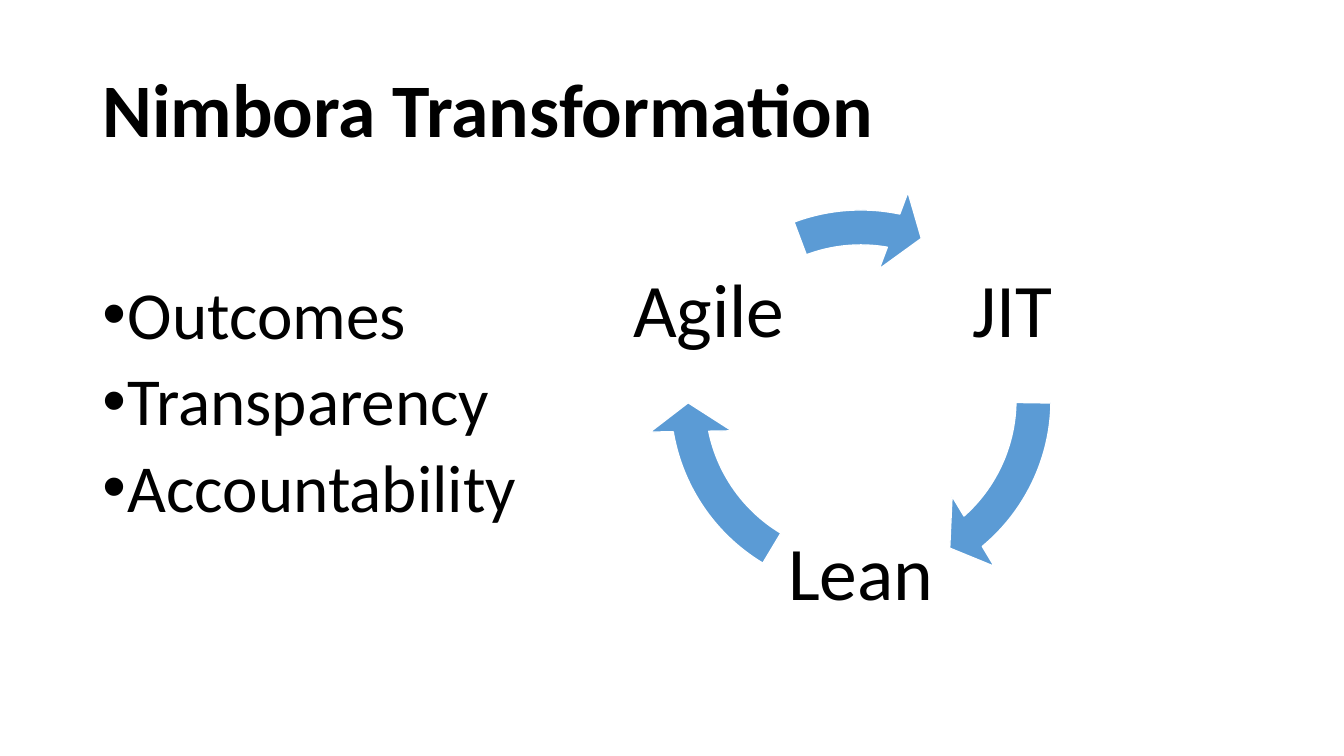
"""Build the Nimbora Transformation slide: a short list beside a three-step cycle."""
import math
from dataclasses import dataclass

from pptx import Presentation
from pptx import util as u
from pptx.dml.color import RGBColor
from pptx.enum import shapes, text


@dataclass(frozen=True)
class Theme:
    """Colours, font and type sizes of the slide."""
    font: str = "Calibri"
    ink: RGBColor = RGBColor(0, 0, 0)
    arrow: RGBColor = RGBColor(0x5B, 0x9B, 0xD5)
    edge: RGBColor = RGBColor(255, 255, 255)
    heading: int = 54
    body: int = 48


@dataclass(frozen=True)
class Frame:
    """A rectangle in grid columns and rows."""
    left: float
    top: float
    width: float
    height: float


@dataclass(frozen=True)
class Step:
    """A cycle label, its angle, and the angles its arrow runs between."""
    label: str
    angle: float
    start: float
    end: float


THEME = Theme()
COLUMNS, ROWS = 160, 90
CELL = u.Inches(7.5) / ROWS
CENTER_COLUMN, CENTER_ROW = 102.48, 47.64
RADIUS, RING_SIZE, LABEL_SIZE = 20.88, 50.88, 21.48
TITLE = Frame(11, 4.8, 138, 17.4)
BODY = Frame(11, 32.88, 67.68, 48.36)
OUTCOMES = ("Outcomes", "Transparency", "Accountability")
STEPS = (
    Step("JIT", -30, 0.86, 49.4),
    Step("Lean", 90, 121, 169.54),
    Step("Agile", 210, 249.45, 280.94),
)


def grid(cells: float) -> u.Emu:
    """Turn grid cells into a length."""
    return u.Emu(round(cells * CELL))


def bounds(frame: Frame) -> tuple:
    """Return left, top, width and height of a frame as lengths."""
    return tuple(map(grid, (frame.left, frame.top, frame.width, frame.height)))


def square(column: float, row: float, size: float) -> Frame:
    """Return a square frame centred on a grid point."""
    return Frame(column - size / 2, row - size / 2, size, size)


def place(box, frame: Frame) -> None:
    """Move a placeholder onto a frame."""
    box.left, box.top, box.width, box.height = bounds(frame)


def write(box, *lines: str, size: int, align=text.PP_ALIGN.LEFT,
          anchor=text.MSO_ANCHOR.MIDDLE, bold: bool = False,
          before: float = 0, hanging: float = 0) -> None:
    """Fill a box with one formatted paragraph per line."""
    frame = box.text_frame
    frame.word_wrap = True
    frame.auto_size = text.MSO_AUTO_SIZE.NONE
    frame.vertical_anchor = anchor
    for index, line in enumerate(lines):
        para = frame.add_paragraph() if index else frame.paragraphs[0]
        para.alignment = align
        para.line_spacing = 0.9
        para.space_before = u.Pt(before)
        if hanging:
            properties = para._p.get_or_add_pPr()
            properties.set("marL", str(grid(hanging)))
            properties.set("indent", str(-grid(hanging)))
        span = para.add_run()
        span.text = line
        span.font.name = THEME.font
        span.font.size = u.Pt(size)
        span.font.bold = bold
        span.font.color.rgb = THEME.ink


def add_label(page, step: Step) -> None:
    """Write a step's label at its angle on the cycle."""
    angle = math.radians(step.angle)
    frame = square(CENTER_COLUMN + RADIUS * math.cos(angle),
                   CENTER_ROW + RADIUS * math.sin(angle), LABEL_SIZE)
    box = page.shapes.add_textbox(*bounds(frame))
    inner = box.text_frame
    inner.margin_left = inner.margin_right = u.Inches(0.07)
    inner.margin_top = inner.margin_bottom = u.Inches(0.07)
    write(box, step.label, size=THEME.heading, align=text.PP_ALIGN.CENTER)


def add_arrow(page, step: Step) -> None:
    """Draw the curved arrow that leaves a step."""
    ring = square(CENTER_COLUMN, CENTER_ROW, RING_SIZE)
    arrow = page.shapes.add_shape(shapes.MSO_SHAPE.CIRCULAR_ARROW, *bounds(ring))
    percentages = (8.2, 9.6 * 60, step.end * 60, step.start * 60, 9.6)
    for index, percentage in enumerate(percentages):
        arrow.adjustments[index] = percentage / 100
    arrow.shadow.inherit = False
    arrow.fill.solid()
    arrow.fill.fore_color.rgb = THEME.arrow
    arrow.line.color.rgb = THEME.edge
    arrow.line.width = u.Pt(1)


def main() -> None:
    """Build and save the deck."""
    deck = Presentation()
    deck.slide_width, deck.slide_height = grid(COLUMNS), grid(ROWS)
    page = deck.slides.add_slide(deck.slide_layouts[1])
    title, body = page.placeholders
    place(title, TITLE)
    write(title, "Nimbora Transformation", size=THEME.heading, bold=True)
    place(body, BODY)
    write(body, *OUTCOMES, size=THEME.body, anchor=text.MSO_ANCHOR.TOP,
          before=10, hanging=3)
    for step in STEPS:
        add_label(page, step)
        add_arrow(page, step)
    deck.save("out.pptx")


if __name__ == "__main__":
    main()
